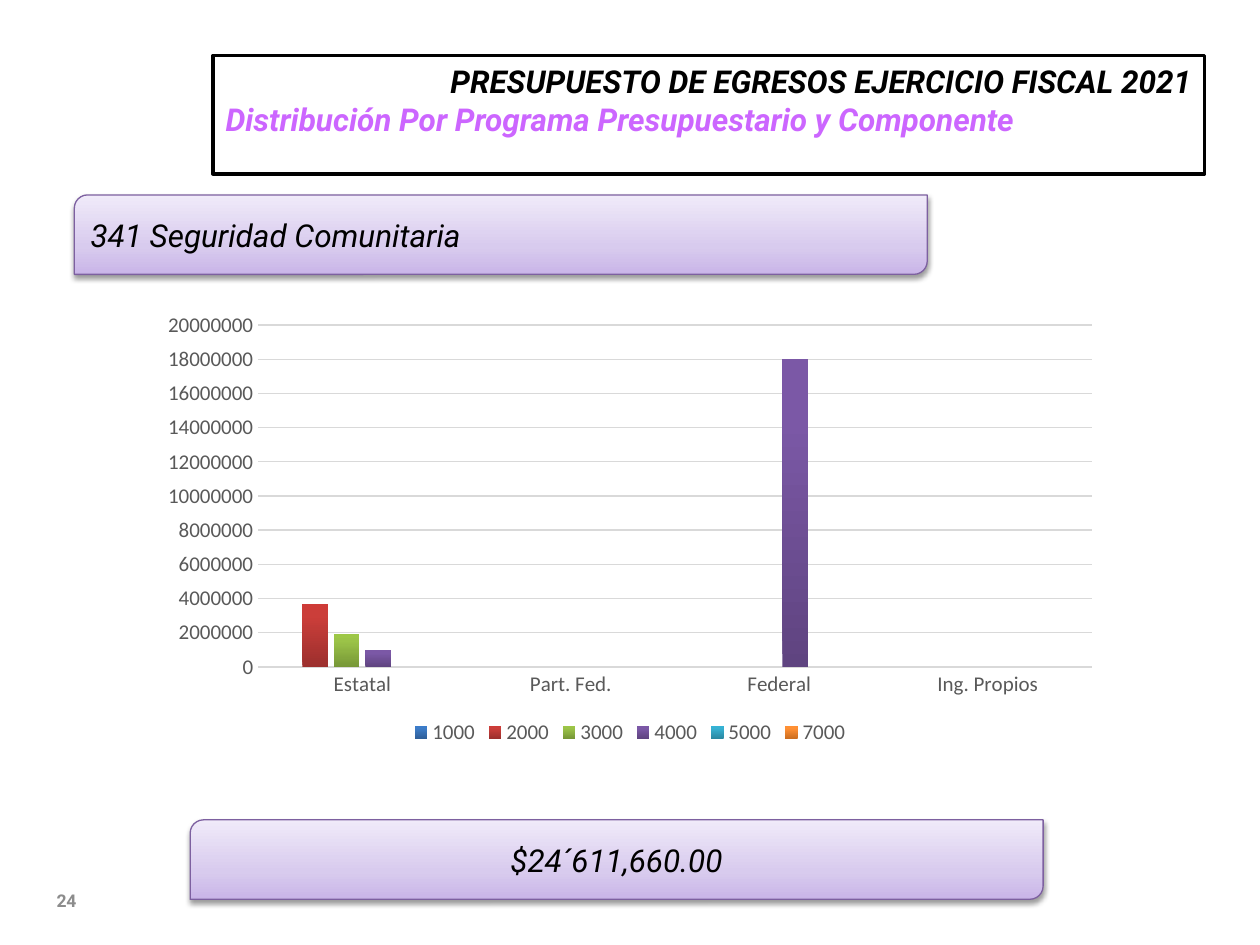
from copy import deepcopy

from pptx import Presentation
from pptx.chart.data import CategoryChartData
from pptx.dml.color import RGBColor
from pptx.enum.chart import XL_CHART_TYPE, XL_LEGEND_POSITION, XL_TICK_MARK
from pptx.enum.shapes import MSO_SHAPE
from pptx.enum.text import MSO_ANCHOR, MSO_AUTO_SIZE, PP_ALIGN
from pptx.oxml import parse_xml
from pptx.oxml.ns import nsdecls, qn
from pptx.util import Pt

BLACK = RGBColor(0x00, 0x00, 0x00)
ORCHID = RGBColor(0xCC, 0x66, 0xFF)
PURPLE = RGBColor(0x7D, 0x60, 0xA0)
PAGE_GRAY = RGBColor(0x8C, 0x8C, 0x8C)
TEXT_GRAY = RGBColor(0x59, 0x59, 0x59)
GRID_GRAY = RGBColor(0xD9, 0xD9, 0xD9)

# Content
HEADING = [
    ("PRESUPUESTO DE EGRESOS EJERCICIO FISCAL 2021", PP_ALIGN.RIGHT, BLACK),
    ("Distribución Por Programa Presupuestario y Componente", PP_ALIGN.JUSTIFY, ORCHID),
]
BANNERS = [
    ("341 Seguridad Comunitaria", PP_ALIGN.LEFT, 42.5, 111.4),
    ("$24´611,660.00", PP_ALIGN.CENTER, 108.7, 468.5),
]
PAGE_NUMBER = "24"
SOURCES = ["Estatal", "Part. Fed.", "Federal", "Ing. Propios"]
CHAPTERS = [  # name, values, gradient colours
    ("1000", [None] * 4, ("2F5F99", "3D7CC7", "3A7CCB")),
    ("2000", [3700000, None, None, None], ("9C2F2D", "CB3E3A", "CE3B37")),
    ("3000", [1900000, None, None, None], ("779737", "9BC348", "9DC746")),
    ("4000", [1000000, None, 18000000, None], ("5F4480", "7B58A6", "7C57A8")),
    ("5000", [None] * 4, ("2A88A2", "37B1D2", "34B4D6")),
    ("7000", [None] * 4, ("CC6E20", "FF9034", "FF9136")),
]
BANNER_COLORS = ("C9B5E8", "D8CBEE", "F0EAF9")

# Font formats
HEADING_FONT = {"name": "Roboto", "size": Pt(18), "bold": True, "italic": True}
BANNER_FONT = {"name": "Roboto", "size": Pt(18), "italic": True}
PAGE_FONT = {"name": "Roboto", "size": Pt(10), "bold": True}
CHART_FONT = {"name": "Calibri", "size": Pt(12), "bold": False}


def format_font(font, values, color):
    for name, value in values.items():
        setattr(font, name, value)
    font.color.rgb = color


def write(para, text, align, values, color):
    para.alignment = align
    span = para.add_run()
    span.text = text
    format_font(span.font, values, color)


def fill_gradient(fill, element, colors, middle):
    """Three stops running from bottom to top."""
    fill.gradient()
    fill.gradient_angle = 90
    stop_list = next(element.iter(qn("a:gsLst")))
    stop_list.insert(1, deepcopy(stop_list[0]))
    for stop, color, position in zip(fill.gradient_stops, colors, (0, middle, 1)):
        stop.color.rgb = RGBColor.from_string(color)
        stop.position = position


def format_line(line, color, width):
    line.color.rgb = color
    line.width = Pt(width)


deck = Presentation()
deck.slide_width, deck.slide_height = Pt(720), Pt(540)
page = deck.slides.add_slide(deck.slide_layouts[5])

# Heading in a rounded frame
title = page.shapes.title
title.left, title.top, title.width, title.height = Pt(121.7), Pt(31.7), Pt(566.6), Pt(67.7)
title._element.spPr.append(parse_xml(
    f'<a:prstGeom {nsdecls("a")} prst="roundRect"><a:avLst/></a:prstGeom>'))
format_line(title.line, BLACK, 2)
frame = title.text_frame
frame.auto_size = MSO_AUTO_SIZE.NONE
frame.vertical_anchor = MSO_ANCHOR.TOP
frame.add_paragraph()
for para, (text, align, color) in zip(frame.paragraphs, HEADING):
    write(para, text, align, HEADING_FONT, color)

# Programme and total banners
for text, align, left, top in BANNERS:
    banner = page.shapes.add_shape(
        MSO_SHAPE.ROUND_2_DIAG_RECTANGLE, Pt(left), Pt(top), Pt(487.4), Pt(45.4))
    fill_gradient(banner.fill, banner._element, BANNER_COLORS, 0.35)
    format_line(banner.line, PURPLE, 0.75)
    banner.shadow.inherit = False
    banner._element.spPr.find(qn("a:effectLst")).append(parse_xml(
        f'<a:outerShdw {nsdecls("a")} blurRad="{Pt(3.1)}" dist="{Pt(1.6)}" dir="5400000" '
        'rotWithShape="0"><a:srgbClr val="000000"><a:alpha val="38000"/></a:srgbClr>'
        '</a:outerShdw>'))
    banner.text_frame.word_wrap = True
    banner.text_frame.vertical_anchor = MSO_ANCHOR.MIDDLE
    write(banner.text_frame.paragraphs[0], text, align, BANNER_FONT, BLACK)

# Budget chart
data = CategoryChartData()
data.categories = SOURCES
for name, values, _ in CHAPTERS:
    data.add_series(name, values)
chart = page.shapes.add_chart(
    XL_CHART_TYPE.COLUMN_CLUSTERED, Pt(85), Pt(173.5), Pt(550), Pt(255), data).chart
chart.has_title = False
format_font(chart.font, CHART_FONT, TEXT_GRAY)
plot = chart.plots[0]
plot.gap_width, plot.overlap, plot.vary_by_categories = 100, -24, False
for series, (_, _, colors) in zip(plot.series, CHAPTERS):
    series.invert_if_negative = False
    fill_gradient(series.format.fill, series._element, colors, 0.8)

# Axes and legend
for axis in (chart.category_axis, chart.value_axis):
    axis.major_tick_mark = axis.minor_tick_mark = XL_TICK_MARK.NONE
    format_font(axis.tick_labels.font, CHART_FONT, TEXT_GRAY)
format_line(chart.category_axis.format.line, GRID_GRAY, 1)
amounts = chart.value_axis
amounts.minimum_scale, amounts.maximum_scale, amounts.major_unit = 0, 20000000, 2000000
amounts.format.line.fill.background()
format_line(amounts.major_gridlines.format.line, GRID_GRAY, 0.75)
chart.has_legend = True
chart.legend.position = XL_LEGEND_POSITION.BOTTOM
chart.legend.include_in_layout = False
format_font(chart.legend.font, CHART_FONT, TEXT_GRAY)

# Page number
box = page.shapes.add_textbox(Pt(25.2), Pt(500.4), Pt(168), Pt(28.8))
box.text_frame.word_wrap = True
box.text_frame.vertical_anchor = MSO_ANCHOR.MIDDLE
write(box.text_frame.paragraphs[0], PAGE_NUMBER, PP_ALIGN.LEFT, PAGE_FONT, PAGE_GRAY)

deck.save("out.pptx")
